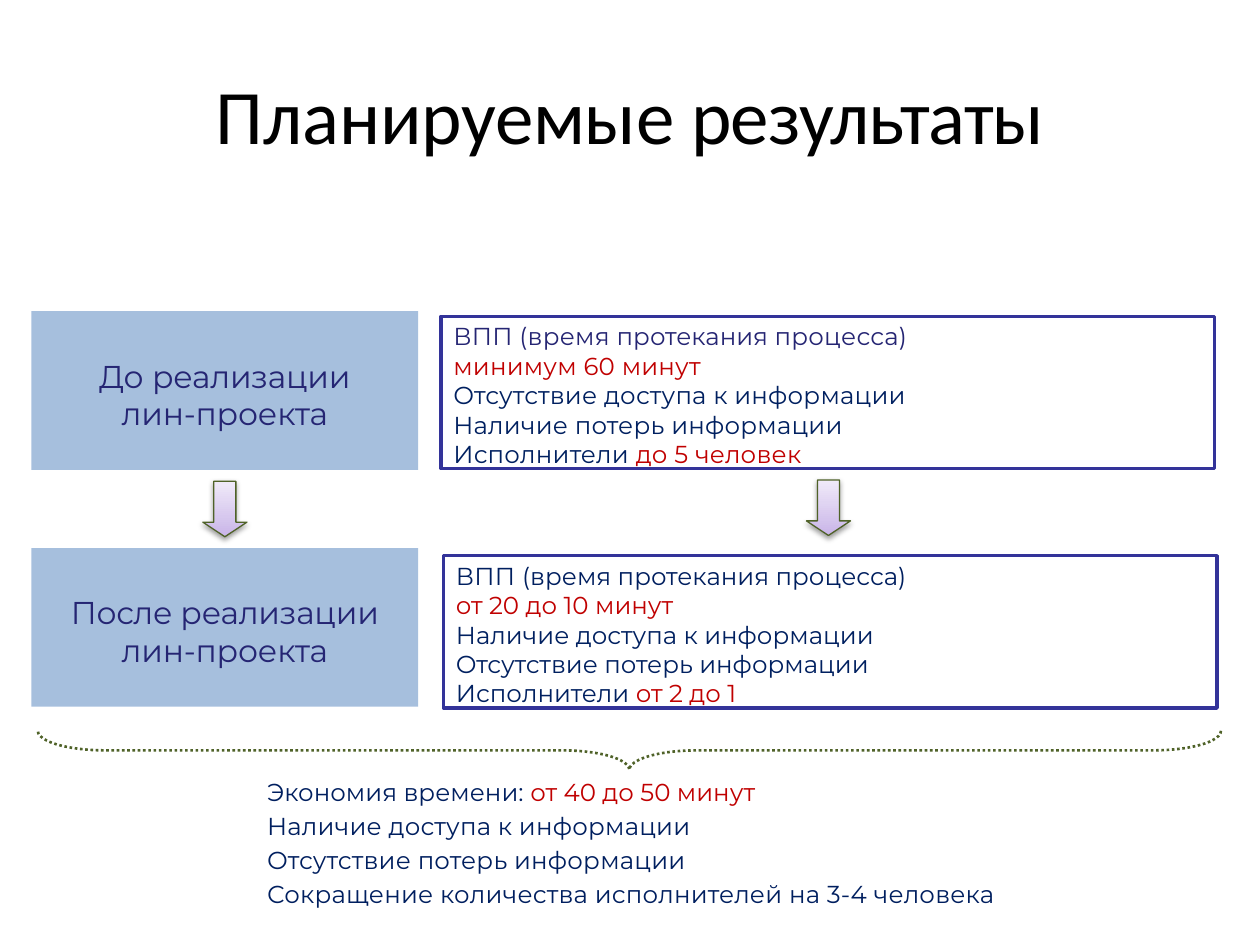
import pptx
import pptx.dml.color
import pptx.enum.dml
import pptx.enum.shapes
import pptx.enum.text
import pptx.oxml
import pptx.oxml.ns
import pptx.util
from lxml import etree

Inches = pptx.util.Inches
Pt = pptx.util.Pt
SHAPE = pptx.enum.shapes.MSO_SHAPE
ANCHOR = pptx.enum.text.MSO_ANCHOR
ALIGN = pptx.enum.text.PP_ALIGN
qn = pptx.oxml.ns.qn

INDIGO, NAVY, DEEP_NAVY, RED = "252573", "002060", "001F5F", "C00000"
OLIVE = "4F6228"


def color(value):
    return pptx.dml.color.RGBColor.from_string(value)


class ResultsSlide:
    font = "Montserrat"

    def __init__(self, slide):
        self.slide = slide

    def add_lines(self, frame, lines, size, align=ALIGN.LEFT, anchor=ANCHOR.TOP,
                  left=0, top=0, gap=0, font=None):
        frame.word_wrap = True
        frame.vertical_anchor = anchor
        frame.margin_left, frame.margin_top = Inches(left), Inches(top)
        frame.margin_right = frame.margin_bottom = 0
        for index, line in enumerate(lines):
            paragraph = frame.add_paragraph() if index else frame.paragraphs[0]
            paragraph.alignment = align
            paragraph.space_before = Pt(gap if index else 0)
            for words, shade, *spacing in line:
                run = paragraph.add_run()
                run.text = words
                run.font.name = font or self.font
                run.font.size = Pt(size)
                run.font.color.rgb = color(shade)
                if spacing:
                    run._r.get_or_add_rPr().set("spc", str(round(spacing[0] * 100)))

    def shape(self, kind, place):
        shape = self.slide.shapes.add_shape(kind, *map(Inches, place))
        shape.shadow.inherit = False
        return shape

    def outline(self, shape, shade, width):
        shape.line.color.rgb = color(shade)
        shape.line.width = Pt(width)

    def title(self, line, place):
        title = self.slide.shapes.title
        title.left, title.top, title.width, title.height = map(Inches, place)
        self.add_lines(title.text_frame, [line], 44, ALIGN.CENTER, ANCHOR.MIDDLE,
                       top=0.01, font="Calibri")

    def stage(self, top, lines):
        stage = self.shape(SHAPE.RECTANGLE, (0.25, top, 3.07, 1.26))
        stage.fill.solid()
        stage.fill.fore_color.rgb = color("4F81BD")
        shade = stage._element.spPr.find(qn("a:solidFill"))[0]
        etree.SubElement(shade, qn("a:alpha"), val="50000")
        stage.line.fill.background()
        self.add_lines(stage.text_frame, lines, 18, ALIGN.CENTER, ANCHOR.MIDDLE, top=0.06)

    def details(self, left, top, lines):
        details = self.shape(SHAPE.RECTANGLE, (left, top, 6.14, 1.21))
        details.fill.background()
        self.outline(details, "333399", 1.92)
        self.add_lines(details.text_frame, lines, 14, left=0.1, top=0.04)

    def arrow(self, left, top):
        arrow = self.shape(SHAPE.DOWN_ARROW, (left, top, 0.35, 0.44))
        arrow.adjustments[0] = 0.5
        arrow.adjustments[1] = 0.33
        arrow.fill.gradient()
        arrow.fill.gradient_angle = 90
        for stop, shade in zip(arrow.fill.gradient_stops, ("C9B5E8", "F0EAF9")):
            stop.color.rgb = color(shade)
        self.outline(arrow, OLIVE, 0.75)
        effects = arrow._element.spPr.find(qn("a:effectLst"))
        shadow = etree.SubElement(effects, qn("a:outerShdw"), blurRad=str(Pt(3.1)),
                                  dist=str(Pt(1.6)), dir="5400000", rotWithShape="0")
        shade = etree.SubElement(shadow, qn("a:srgbClr"), val="000000")
        etree.SubElement(shade, qn("a:alpha"), val="38000")

    def brace(self, place):
        brace = self.shape(SHAPE.LEFT_BRACE, place)
        brace.rotation = 270
        brace.adjustments[0] = 1.726
        brace.adjustments[1] = 0.5
        brace.fill.background()
        self.outline(brace, OLIVE, 1.5)
        brace.line.dash_style = pptx.enum.dml.MSO_LINE.ROUND_DOT

    def summary(self, place, lines):
        summary = self.slide.shapes.add_textbox(*map(Inches, place))
        self.add_lines(summary.text_frame, lines, 14, left=1.14, top=0.04, gap=2.6)


def main():
    deck = pptx.Presentation()
    deck.slide_width, deck.slide_height = Inches(10), Inches(7.5)
    results = ResultsSlide(deck.slides.add_slide(deck.slide_layouts[5]))

    results.title([("Планируемые ", "000000", -0.1), ("результаты", "000000", -0.7)],
                  (0.51, 0.52, 8.98, 0.75))
    results.stage(2.47, [[("До ", INDIGO), ("реализации", INDIGO, -0.1)],
                         [("лин-проекта", INDIGO, -0.1)]])
    results.details(3.5, 2.51, [
        [("ВПП (время ", INDIGO, 0.1), ("протекания ", INDIGO), ("процесса)", INDIGO, 0.1)],
        [("минимум 60 минут", RED, 0.1)],
        [("Отсутствие доступа к информации", NAVY, 0.1)],
        [("Наличие потерь информации", NAVY, 0.1)],
        [("Исполнители ", NAVY, 0.1), ("до 5 человек", RED, 0.1)],
    ])
    for left, top in ((1.61, 3.82), (6.4, 3.81)):
        results.arrow(left, top)
    results.stage(4.35, [[("После реализации", INDIGO, -0.1)],
                         [("лин-проекта", INDIGO, -0.1)]])
    results.details(3.52, 4.41, [
        [("ВПП ", DEEP_NAVY, 0.1), ("(время протекания процесса)", DEEP_NAVY)],
        [("от 20 до 10 минут", RED)],
        [("Наличие доступа к информации", NAVY)],
        [("Отсутствие потерь информации", NAVY)],
        [("Исполнители ", NAVY), ("от 2 до 1", RED)],
    ])
    results.summary((0.98, 6.13, 8.66, 1.3), [
        [("Экономия времени: ", DEEP_NAVY), ("от 40 до 50 минут", RED)],
        [("Наличие доступа к информации", DEEP_NAVY, 0.1)],
        [("Отсутствие потерь информации", DEEP_NAVY, 0.1)],
        [("Сокращение количества исполнителей на 3-4 человека", DEEP_NAVY, 0.1)],
    ])
    results.brace((4.84, 1.26, 0.31, 9.39))
    deck.save("out.pptx")


if __name__ == "__main__":
    main()
